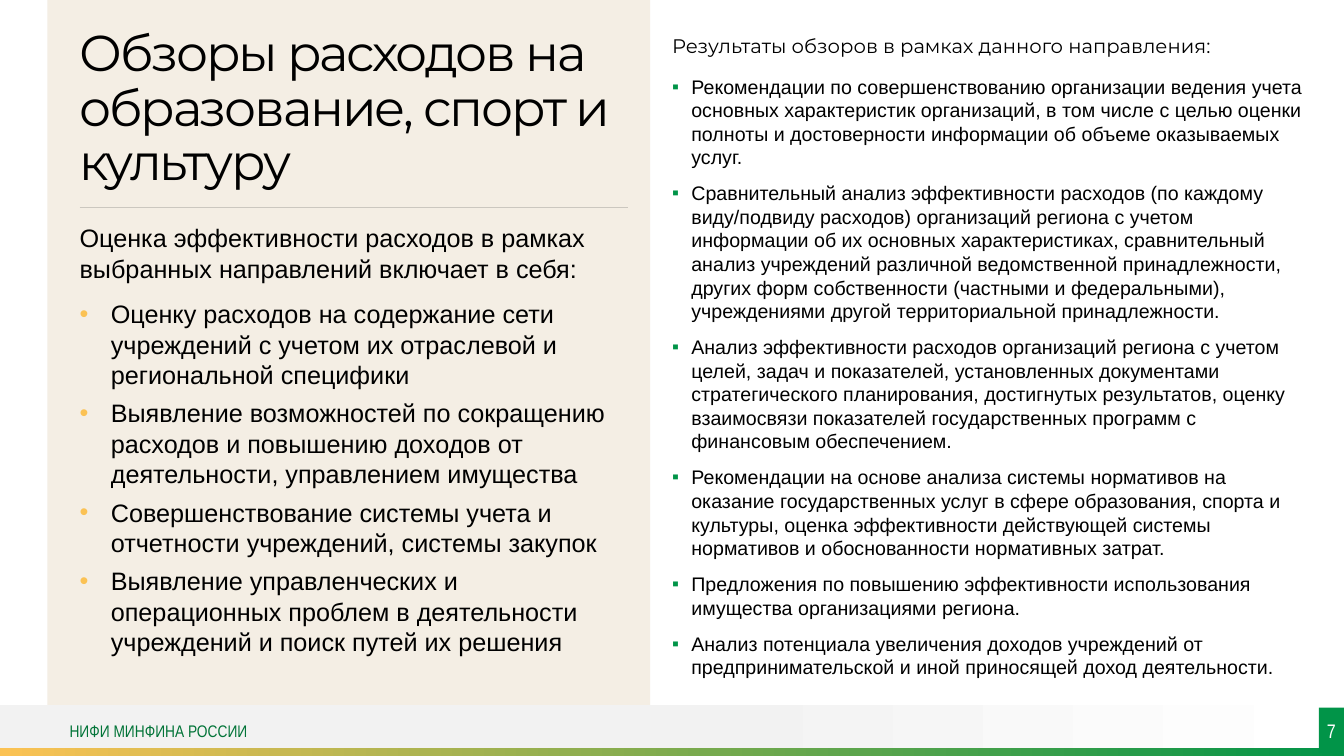
from lxml import etree
from pptx import Presentation, util as u
from pptx.dml.color import RGBColor
from pptx.enum import shapes, text
from pptx.oxml.ns import qn

GREEN = RGBColor(0x01, 0x94, 0x48)
DARK_GREEN = RGBColor(0x02, 0x74, 0x38)
AMBER = RGBColor(0xFB, 0xC2, 0x54)
CREAM = RGBColor(0xF4, 0xEE, 0xE4)
RULE = RGBColor(0xCB, 0xC7, 0xBF)
GREY = RGBColor(0xF2, 0xF2, 0xF2)
WHITE = RGBColor(0xFF, 0xFF, 0xFF)
BLACK = RGBColor(0, 0, 0)

H = 7.5
W = H * 16 / 9
LEFT_PANEL = (0.47, 0, 5.98, 7)
RIGHT_PANEL = (6.57, 0.29, 6.52, 6.7)
FOOTER = (0, 6.99, W, H - 6.99)

TITLE = "Обзоры расходов на образование, спорт и культуру"
LEFT_LEAD = "Оценка эффективности расходов в рамках выбранных направлений включает в себя:"
LEFT_ITEMS = [
    "Оценку расходов на содержание сети учреждений с учетом их отраслевой и региональной специфики",
    "Выявление возможностей по сокращению расходов и повышению доходов от деятельности, управлением имущества",
    "Совершенствование системы учета и отчетности учреждений, системы закупок",
    "Выявление управленческих и операционных проблем в деятельности учреждений и поиск путей их решения",
]
RIGHT_LEAD = "Результаты обзоров в рамках данного направления:"
RIGHT_ITEMS = [
    "Рекомендации по совершенствованию организации ведения учета основных характеристик организаций, "
    "в том числе с целью оценки полноты и достоверности информации об объеме оказываемых услуг.",
    "Сравнительный анализ эффективности расходов (по каждому виду/подвиду расходов) организаций региона "
    "с учетом информации об их основных характеристиках, сравнительный анализ учреждений различной "
    "ведомственной принадлежности, других форм собственности (частными и федеральными), "
    "учреждениями другой территориальной принадлежности.",
    "Анализ эффективности расходов организаций региона с учетом целей, задач и показателей, "
    "установленных документами стратегического планирования, достигнутых результатов, оценку "
    "взаимосвязи показателей государственных программ с финансовым обеспечением.",
    "Рекомендации на основе анализа системы нормативов на оказание государственных услуг в сфере "
    "образования, спорта и культуры, оценка эффективности действующей системы нормативов "
    "и обоснованности нормативных затрат.",
    "Предложения по повышению эффективности использования имущества организациями региона.",
    "Анализ потенциала увеличения доходов учреждений от предпринимательской и иной приносящей доход деятельности.",
]


def inches(*values):
    return [u.Inches(v) for v in values]


def set_all(target, values):
    for name, value in values.items():
        setattr(target, name, value)


def add_rect(s, box, color=None, stops=None):
    sp = s.shapes.add_shape(shapes.MSO_SHAPE.RECTANGLE, *inches(*box))
    sp.shadow.inherit = False
    sp.line.fill.background()
    if stops:
        sp.fill.gradient()
        sp.fill.gradient_angle = 0
        for stop, (position, stop_color) in zip(sp.fill.gradient_stops, stops):
            stop.position = position
            stop.color.rgb = stop_color
    else:
        sp.fill.solid()
        sp.fill.fore_color.rgb = color
    return sp


def prepare_frame(sp, anchor=text.MSO_ANCHOR.TOP, inset=(0, 0)):
    tf = sp.text_frame
    x, y = inches(*inset)
    set_all(tf, dict(word_wrap=True, auto_size=text.MSO_AUTO_SIZE.NONE, vertical_anchor=anchor,
                     margin_left=x, margin_right=x, margin_top=y, margin_bottom=y))
    return tf


def add_bullet(p, mark, color, indent):
    pPr = p._p.get_or_add_pPr()
    pPr.set("marL", str(u.Inches(indent)))
    pPr.set("indent", str(-u.Inches(indent)))
    bu_color = etree.SubElement(pPr, qn("a:buClr"))
    etree.SubElement(bu_color, qn("a:srgbClr")).set("val", str(color))
    etree.SubElement(pPr, qn("a:buFont")).set("typeface", "Arial")
    etree.SubElement(pPr, qn("a:buChar")).set("char", mark)


def write(p, words, font, size, color=BLACK, **layout):
    set_all(p, layout)
    r = p.add_run()
    r.text = words
    set_all(r.font, dict(name=font, size=u.Pt(size)))
    r.font.color.rgb = color
    return r


def write_list(tf, lead, lead_font, items, size, lead_after, before, after, bullet):
    write(tf.paragraphs[0], lead, lead_font, size, space_after=u.Pt(lead_after))
    for item in items:
        p = tf.add_paragraph()
        add_bullet(p, *bullet)
        write(p, item, "Arial", size, space_before=u.Pt(before), space_after=u.Pt(after))


def add_footer(s, box):
    x, y, w, h = box
    stripe = 0.08
    add_rect(s, (x, y, w, h - stripe + 0.03), stops=[(0.53, GREY), (1, WHITE)])
    add_rect(s, (x, y + h - stripe, w, stripe), stops=[(0, AMBER), (1, GREEN)])
    owner = s.shapes.add_textbox(*inches(x + 0.69, y + 0.03, 4.61, 0.45))
    tf = prepare_frame(owner, text.MSO_ANCHOR.MIDDLE)
    write(tf.paragraphs[0], "НИФИ МИНФИНА РОССИИ", "Arial Narrow", 12, DARK_GREEN)
    number = add_rect(s, (x + w - 0.25, y + 0.03, 0.25, 0.45), GREEN)
    tf = prepare_frame(number, text.MSO_ANCHOR.MIDDLE)
    write(tf.paragraphs[0], "7", "Arial Narrow", 14, WHITE, alignment=text.PP_ALIGN.CENTER)


def add_left_panel(s, box):
    x, y, w, h = box
    panel = add_rect(s, box, CREAM)
    s.shapes._spTree.remove(panel._element)
    s.shapes._spTree.insert(2, panel._element)
    x, inner = x + 0.32, w - 0.54

    title = s.shapes.title
    set_all(title, dict(zip(("left", "top", "width", "height"), inches(x, y + 0.14, inner + 0.16, 1.76))))
    tf = prepare_frame(title, text.MSO_ANCHOR.BOTTOM)
    r = write(tf.paragraphs[0], TITLE, "Montserrat", 36, line_spacing=0.9, alignment=text.PP_ALIGN.LEFT)
    r._r.get_or_add_rPr().set("spc", "-150")

    rule = s.shapes.add_connector(shapes.MSO_CONNECTOR.STRAIGHT, *inches(x, y + 2.06, x + inner, y + 2.06))
    rule.line.color.rgb = RULE
    rule.line.width = u.Pt(0.5)
    etree.SubElement(rule._element.spPr, qn("a:effectLst"))

    body = s.shapes.add_textbox(*inches(x, y + 2.21, inner, h - 2.54))
    write_list(prepare_frame(body), LEFT_LEAD, "Arial", LEFT_ITEMS, 18, 5, 6, 0, ("•", AMBER, 0.31))


def add_right_panel(s, box):
    results = s.shapes.add_textbox(*inches(*box))
    tf = prepare_frame(results, inset=(0.1, 0.05))
    write_list(tf, RIGHT_LEAD, "Montserrat", RIGHT_ITEMS, 14, 6, 6, 3, ("▪", GREEN, 0.19))


def main():
    prs = Presentation()
    prs.slide_width, prs.slide_height = inches(W, H)
    s = prs.slides.add_slide(prs.slide_layouts[5])
    add_footer(s, FOOTER)
    add_left_panel(s, LEFT_PANEL)
    add_right_panel(s, RIGHT_PANEL)
    prs.save("out.pptx")


if __name__ == "__main__":
    main()
